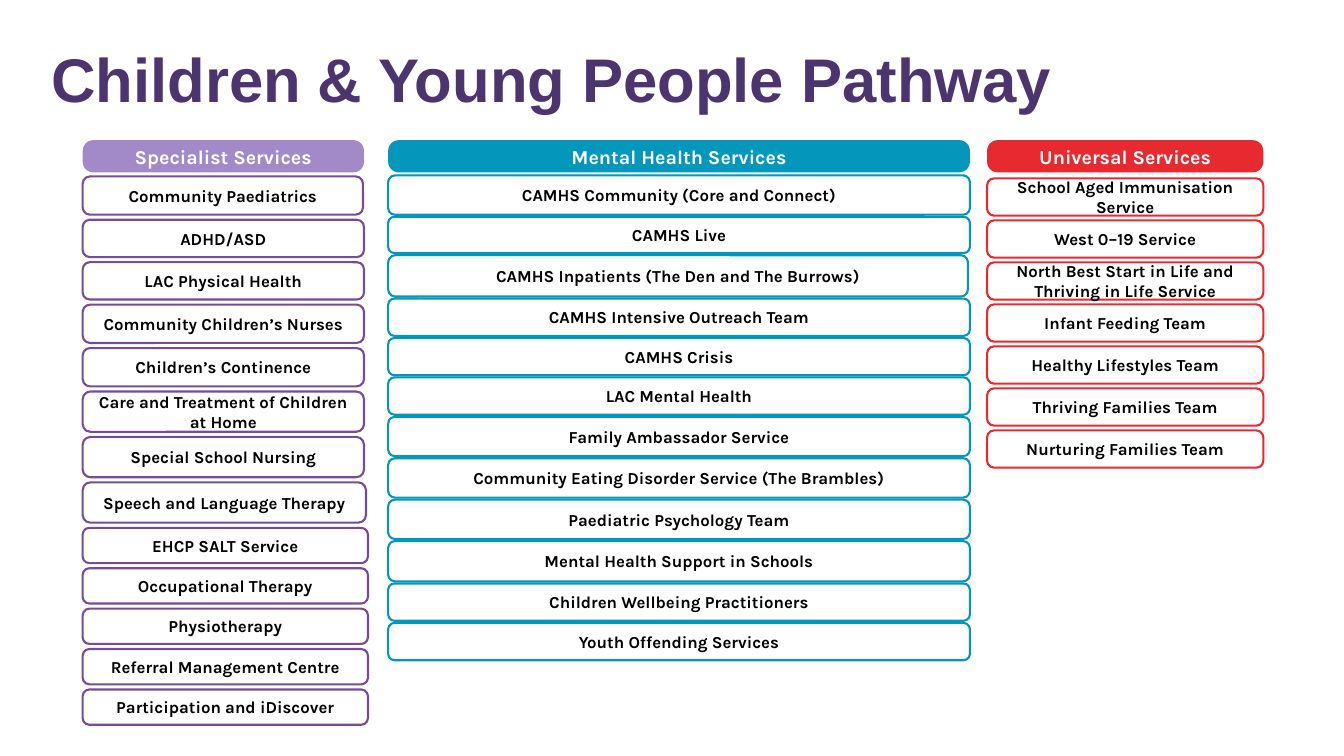
"""Build the Children & Young People Pathway slide with three service columns."""
from pptx import Presentation
from pptx.dml.color import RGBColor
from pptx.enum.shapes import MSO_SHAPE
from pptx.enum.text import MSO_ANCHOR, MSO_AUTO_SIZE, PP_ALIGN
from pptx.util import Inches, Pt

COLORS = {
    "title": "4C346F",
    "lilac": "A289C8",
    "purple": "764C99",
    "teal": "0397BC",
    "red": "E62A2F",
    "white": "FFFFFF",
    "black": "000000",
}

SPECIALIST = [
    ("Community Paediatrics", 2.78, 0.38),
    ("ADHD/ASD", 2.79, 0.37),
    ("LAC Physical Health", 2.79, 0.37),
    ("Community Children’s Nurses", 2.79, 0.38),
    ("Children’s Continence", 2.79, 0.38),
    ("Care and Treatment of Children at Home", 2.79, 0.4),
    ("Special School Nursing", 2.79, 0.4),
    ("Speech and Language Therapy", 2.81, 0.4),
    ("EHCP SALT Service", 2.83, 0.35),
    ("Occupational Therapy", 2.83, 0.35),
    ("Physiotherapy", 2.83, 0.35),
    ("Referral Management Centre", 2.83, 0.35),
    ("Participation and iDiscover", 2.83, 0.35),
]

MENTAL_HEALTH = [
    ("CAMHS Community (Core and Connect)", 5.77, 0.39),
    ("CAMHS Live", 5.77, 0.36),
    ("CAMHS Inpatients (The Den and The Burrows)", 5.75, 0.41),
    ("CAMHS Intensive Outreach Team", 5.77, 0.37),
    ("CAMHS Crisis", 5.77, 0.37),
    ("LAC Mental Health", 5.77, 0.37),
    ("Family Ambassador Service", 5.77, 0.39),
    ("Community Eating Disorder Service (The Brambles)", 5.77, 0.39),
    ("Paediatric Psychology Team", 5.77, 0.39),
    ("Mental Health Support in Schools", 5.77, 0.4),
    ("Children Wellbeing Practitioners", 5.77, 0.37),
    ("Youth Offending Services", 5.77, 0.37),
]

UNIVERSAL = [(name, 2.74, 0.37) for name in (
    "School Aged Immunisation Service",
    "West 0–19 Service",
    "North Best Start in Life and Thriving in Life Service",
    "Infant Feeding Team",
    "Healthy Lifestyles Team",
    "Thriving Families Team",
    "Nurturing Families Team",
)]


def rgb(name):
    """Return the named palette colour."""
    return RGBColor.from_string(COLORS[name])


def style_text(p, font, size, color):
    """Set the bold font of a paragraph."""
    p.font.name = font
    p.font.size = Pt(size)
    p.font.bold = True
    p.font.color.rgb = rgb(color)


def add_box(slide, text, left, top, width, height, fill, line, radius, size, color):
    """Add a rounded box with centred text."""
    sp = slide.shapes.add_shape(MSO_SHAPE.ROUNDED_RECTANGLE, Inches(left),
                                Inches(top), Inches(width), Inches(height))
    sp.shadow.inherit = False
    sp.adjustments[0] = radius
    sp.fill.solid()
    sp.fill.fore_color.rgb = rgb(fill)
    if line:
        sp.line.color.rgb = rgb(line)
        sp.line.width = Pt(1.5)
    else:
        sp.line.fill.background()
    tf = sp.text_frame
    tf.word_wrap = True
    tf.vertical_anchor = MSO_ANCHOR.MIDDLE
    p = tf.paragraphs[0]
    p.text = text
    p.alignment = PP_ALIGN.CENTER
    style_text(p, "Karla", size, color)


def add_column(slide, heading, services, left, width, top, bottom, fill, line, radius):
    """Add a heading and its services, evenly spaced from top to bottom."""
    add_box(slide, heading, left, 1.39, width, 0.32, fill, None, 0.33, 14, "white")
    used = sum(height for _, _, height in services)
    gap = (bottom - top - used) / (len(services) - 1)
    for name, box_width, height in services:
        add_box(slide, name, left, top, box_width, height,
                "white", line, radius, 12, "black")
        top += height + gap


def add_title(slide, text):
    """Add the slide title."""
    sp = slide.shapes.add_textbox(Inches(0.41), Inches(0.36), Inches(12.5), Inches(0.84))
    tf = sp.text_frame
    tf.word_wrap = True
    tf.auto_size = MSO_AUTO_SIZE.SHAPE_TO_FIT_TEXT
    p = tf.paragraphs[0]
    p.text = text
    style_text(p, "Arial", 44, "title")


def main():
    """Build and save the slide."""
    prs = Presentation()
    prs.slide_width, prs.slide_height = Inches(13.33), Inches(7.5)
    s = prs.slides.add_slide(prs.slide_layouts[6])
    add_title(s, "Children & Young People Pathway")
    add_column(s, "Specialist Services", SPECIALIST, 0.82, 2.79, 1.75, 7.19,
               "lilac", "purple", 0.19)
    add_column(s, "Mental Health Services", MENTAL_HEALTH, 3.85, 5.77, 1.74, 6.55,
               "teal", "teal", 0.17)
    add_column(s, "Universal Services", UNIVERSAL, 9.79, 2.74, 1.77, 4.64,
               "red", "red", 0.19)
    prs.save("out.pptx")


if __name__ == "__main__":
    main()
